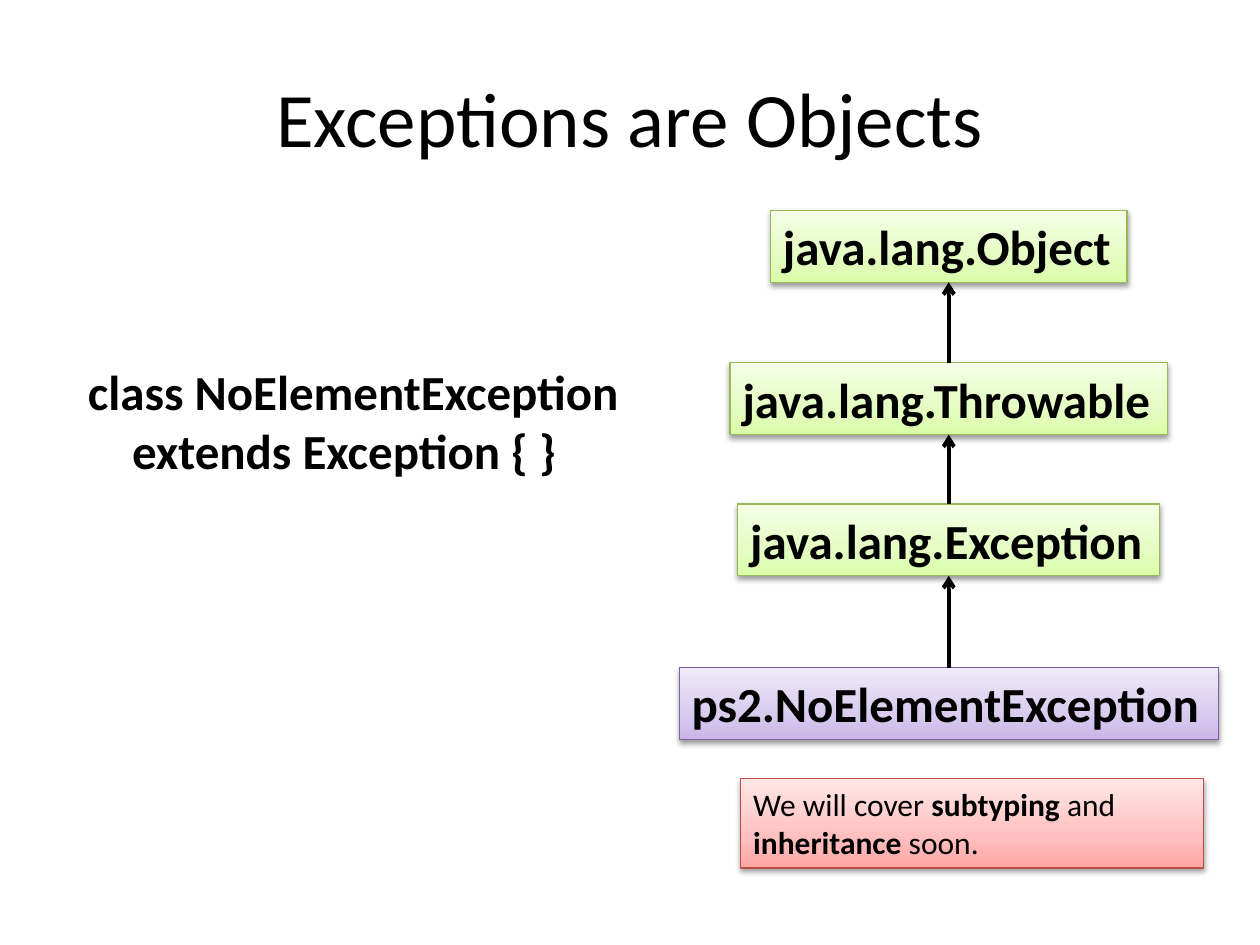
import copy
import itertools
import pptx
import pptx.dml.color
import pptx.enum.shapes
import pptx.enum.text
import pptx.oxml
import pptx.oxml.ns
import pptx.util
from pptx.util import Inches

GREEN = (("DAFDA7", "E4FCC2", "F5FFE7"), "98B955")
PURPLE = (("C9B5E8", "D8CBEE", "F0EAF9"), "7D60A0")
RED = (("FFA6A5", "FFC0BF", "FFE7E7"), "BF4C48")

SHADOW = (
    '<a:outerShdw %s blurRad="40000" dist="20000" dir="5400000" rotWithShape="0">'
    '<a:srgbClr val="000000"><a:alpha val="38000"/></a:srgbClr></a:outerShdw>'
    % pptx.oxml.ns.nsdecls("a")
)


def color(value):
    return pptx.dml.color.RGBColor.from_string(value)


def add_xml(parent, tag, **attributes):
    child = parent.makeelement(pptx.oxml.ns.qn(tag), attributes)
    parent.append(child)
    return child


def write(box, lines, size=28, bold=False, align="LEFT", anchor="TOP", wrap=True, indent=0):
    frame = box.text_frame
    frame.word_wrap = wrap
    frame.vertical_anchor = pptx.enum.text.MSO_ANCHOR[anchor]
    for number, spans in enumerate(lines):
        para = frame.add_paragraph() if number else frame.paragraphs[0]
        para.alignment = pptx.enum.text.PP_ALIGN[align]
        if number and indent:
            para._p.get_or_add_pPr().set("marL", str(Inches(indent)))
        for position, text in enumerate(spans):
            span = para.add_run()
            span.text = text
            span.font.name = "Calibri"
            span.font.size = pptx.util.Pt(size)
            span.font.bold = bold or position % 2 == 1
            span.font.color.rgb = color("000000")


class Slide:
    def __init__(self, deck):
        self.page = deck.slides.add_slide(deck.slide_layouts[6])

    def text(self, left, top, width, height, lines, **style):
        box = self.page.shapes.add_textbox(*map(Inches, (left, top, width, height)))
        write(box, lines, **style)

    def panel(self, left, top, width, height, palette, lines, **style):
        box = self.page.shapes.add_shape(
            pptx.enum.shapes.MSO_SHAPE.RECTANGLE, *map(Inches, (left, top, width, height))
        )
        stops, outline = palette
        box.fill.gradient()
        box.fill.gradient_angle = 90
        properties = box._element.spPr
        stop_list = properties.find(".//" + pptx.oxml.ns.qn("a:gsLst"))
        stop_list.insert(1, copy.deepcopy(stop_list[0]))
        for stop, value, place in zip(box.fill.gradient_stops, stops, (0, 0.35, 1)):
            stop.color.rgb = color(value)
            stop.position = place
        box.line.color.rgb = color(outline)
        box.line.width = pptx.util.Pt(0.75)
        box.shadow.inherit = False
        effects = properties.find(pptx.oxml.ns.qn("a:effectLst"))
        effects.append(pptx.oxml.parse_xml(SHADOW))
        write(box, lines, **style)

    def arrow(self, x, start, end):
        line = self.page.shapes.add_connector(
            pptx.enum.shapes.MSO_CONNECTOR.STRAIGHT, *map(Inches, (x, start, x, end))
        )
        line.line.color.rgb = color("000000")
        line.line.width = pptx.util.Pt(2.25)
        add_xml(line.line._get_or_add_ln(), "a:tailEnd", type="arrow")
        add_xml(line._element.spPr, "a:effectLst")


def main():
    deck = pptx.Presentation()
    deck.slide_width, deck.slide_height = Inches(10), Inches(7.5)
    slide = Slide(deck)
    slide.text(0.5, 0.3, 9, 1.25, [["Exceptions are Objects"]],
               size=44, align="CENTER", anchor="MIDDLE")

    center, height = 7.53, 0.57
    hierarchy = [
        ("java.lang.Object", 1.67, 2.83, GREEN),
        ("java.lang.Throwable", 2.88, 3.47, GREEN),
        ("java.lang.Exception", 4, 3.35, GREEN),
        ("ps2.NoElementException", 5.3, 4.28, PURPLE),
    ]
    for name, top, width, palette in hierarchy:
        slide.panel(center - width / 2, top, width, height, palette, [[name]],
                    bold=True, wrap=False)
    for parent, child in itertools.pairwise(hierarchy):
        slide.arrow(center, child[1], parent[1] + height)

    slide.panel(5.88, 6.18, 3.67, 0.71, RED,
                [["We will cover ", "subtyping", " and ", "inheritance", " soon."]], size=18)
    slide.text(0.6, 2.82, 5, 1.04,
               [["class NoElementException"], ["extends Exception { }"]],
               bold=True, indent=0.35)
    deck.save("out.pptx")


if __name__ == "__main__":
    main()
